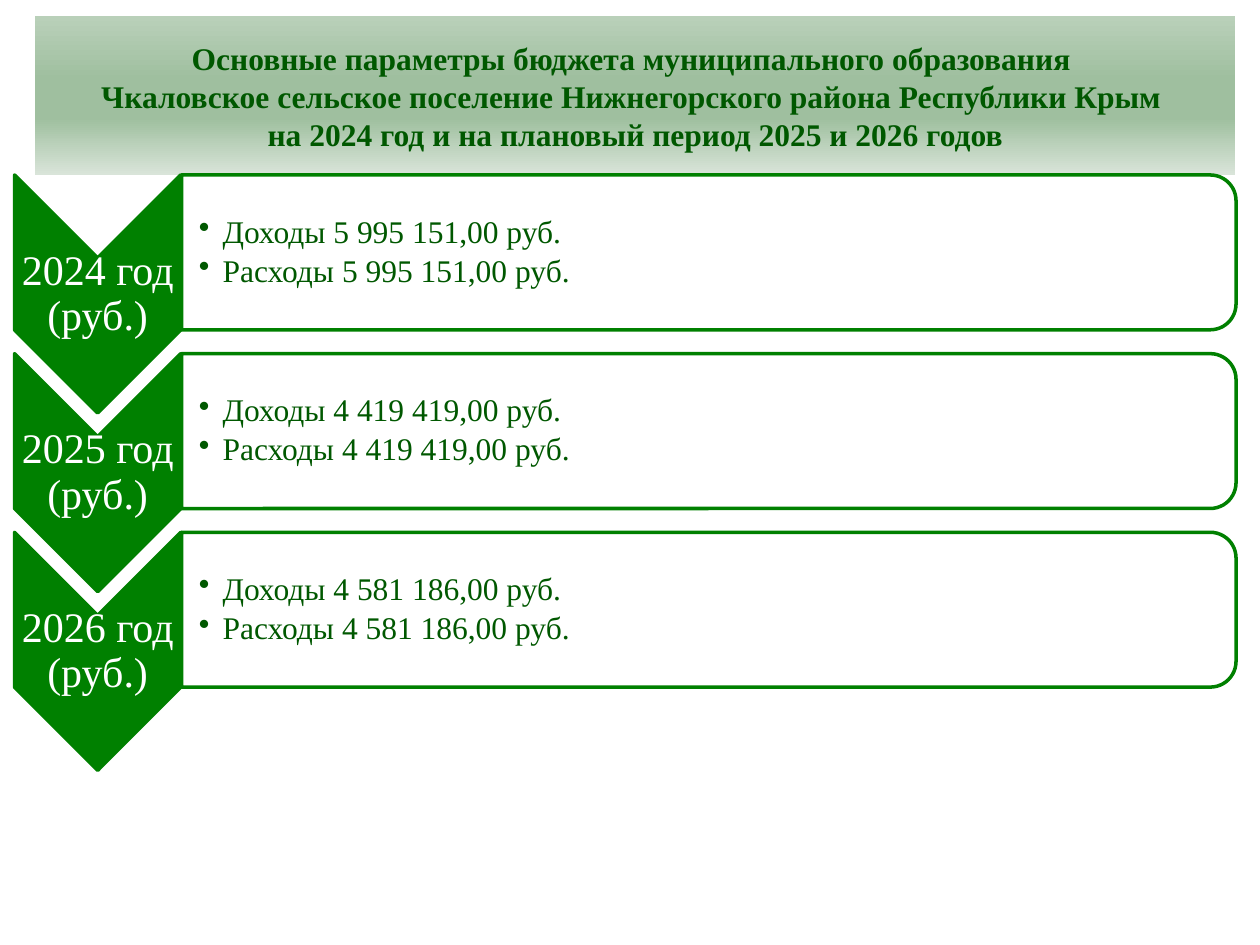
from typing import NamedTuple

from lxml.etree import SubElement
from pptx import Presentation
from pptx.dml.color import RGBColor
from pptx.enum.shapes import MSO_SHAPE
from pptx.enum.text import MSO_ANCHOR, MSO_AUTO_SIZE, PP_ALIGN
from pptx.oxml import parse_xml
from pptx.oxml.ns import nsdecls, qn
from pptx.util import Pt

GREEN = RGBColor(0x00, 0x80, 0x00)
DARK_GREEN = RGBColor(0x00, 0x58, 0x00)
WHITE = RGBColor(0xFF, 0xFF, 0xFF)
BANNER_STOPS = (
    (0, RGBColor(0xB9, 0xD0, 0xB9)),
    (40, RGBColor(0x9F, 0xBF, 0x9F)),
    (65, RGBColor(0xA1, 0xC1, 0xA1)),
    (100, RGBColor(0xD9, 0xE4, 0xD9)),
)
FONT = "Times New Roman"
FIRST_TOP = 100
ROW_STEP = 102.1
TITLE_LINES = (
    "Основные параметры бюджета муниципального образования ",
    "Чкаловское сельское поселение Нижнегорского района Республики Крым ",
    "на 2024 год и на плановый период 2025 и 2026 годов",
)


class Box(NamedTuple):
    left: float
    top: float
    width: float
    height: float


class BudgetYear(NamedTuple):
    year: int
    income: str
    expenses: str


BUDGET = (
    BudgetYear(2024, "5 995 151,00", "5 995 151,00"),
    BudgetYear(2025, "4 419 419,00", "4 419 419,00"),
    BudgetYear(2026, "4 581 186,00", "4 581 186,00"),
)


def format_spans(frame, size: float, color: RGBColor, bold: bool = False) -> None:
    for para in frame.paragraphs:
        for span in para.runs:
            span.font.name = FONT
            span.font.size = Pt(size)
            span.font.bold = bold
            span.font.color.rgb = color


def add_turned_shape(page, kind: MSO_SHAPE, box: Box, fill: RGBColor):
    center_x = box.left + box.width / 2
    center_y = box.top + box.height / 2
    shape = page.shapes.add_shape(
        kind, Pt(center_x - box.height / 2), Pt(center_y - box.width / 2),
        Pt(box.height), Pt(box.width))
    shape.rotation = 90
    shape.shadow.inherit = False
    shape.fill.solid()
    shape.fill.fore_color.rgb = fill
    shape.line.color.rgb = GREEN
    shape.line.width = Pt(2)
    SubElement(shape.line._ln, qn("a:round"))
    return shape


def add_text(page, box: Box, lines: tuple, margin: float, left_margin: float):
    frame = page.shapes.add_textbox(*(Pt(length) for length in box)).text_frame
    frame.word_wrap = True
    frame.vertical_anchor = MSO_ANCHOR.MIDDLE
    frame.margin_left = Pt(left_margin)
    frame.margin_top = frame.margin_right = frame.margin_bottom = Pt(margin)
    frame.text = "\n".join(lines)
    for para in frame.paragraphs:
        para.line_spacing = 0.9
    return frame


def add_bullet(para) -> None:
    properties = para._p.get_or_add_pPr()
    properties.set("lvl", "1")
    properties.set("marL", str(Pt(13.5)))
    properties.set("indent", str(-Pt(13.5)))
    SubElement(properties, qn("a:buChar")).set("char", "•")


def add_title(page) -> None:
    title = page.shapes.title
    title.left, title.top, title.width, title.height = Pt(20), Pt(9.2), Pt(686), Pt(91)
    properties = title._element.spPr
    properties.append(parse_xml(
        f'<a:prstGeom {nsdecls("a")} prst="roundRect"><a:avLst/></a:prstGeom>'))
    stops = "".join(
        f'<a:gs pos="{position * 1000}"><a:srgbClr val="{color}"/></a:gs>'
        for position, color in BANNER_STOPS)
    properties.append(parse_xml(
        f'<a:gradFill {nsdecls("a")} rotWithShape="1"><a:gsLst>{stops}</a:gsLst>'
        '<a:lin ang="5400000" scaled="0"/></a:gradFill>'))
    frame = title.text_frame
    frame.text = "\n".join(TITLE_LINES)
    frame.word_wrap = False
    frame.auto_size = MSO_AUTO_SIZE.NONE
    frame.vertical_anchor = MSO_ANCHOR.MIDDLE
    for para in frame.paragraphs:
        para.alignment = PP_ALIGN.CENTER
    format_spans(frame, 18, DARK_GREEN, bold=True)


def add_budget_row(page, budget: BudgetYear, top: float) -> None:
    add_turned_shape(page, MSO_SHAPE.CHEVRON, Box(8.3, top, 95, 136), GREEN)
    label = add_text(page, Box(8.3, top + 47.6, 95, 41),
                     (f"{budget.year} год (руб.)",), 1.2, 1.2)
    label.paragraphs[0].alignment = PP_ALIGN.CENTER
    format_spans(label, 24, WHITE)

    panel = add_turned_shape(page, MSO_SHAPE.ROUND_2_SAME_RECTANGLE,
                             Box(103.7, top, 602.6, 88.5), WHITE)
    color = panel._element.spPr.find(qn("a:solidFill")).find(qn("a:srgbClr"))
    SubElement(color, qn("a:alpha")).set("val", "90000")
    items = add_text(page, Box(103.7, top + 4.3, 598.3, 80),
                     (f"Доходы {budget.income} руб.",
                      f"Расходы {budget.expenses} руб."), 0.9, 10)
    for para in items.paragraphs:
        para.space_after = Pt(3)
        add_bullet(para)
    format_spans(items, 18, DARK_GREEN)


def main() -> None:
    deck = Presentation()
    deck.slide_width, deck.slide_height = Pt(720), Pt(540)
    page = deck.slides.add_slide(deck.slide_layouts[5])
    add_title(page)
    for index, budget in enumerate(BUDGET):
        add_budget_row(page, budget, FIRST_TOP + index * ROW_STEP)
    deck.save("out.pptx")


if __name__ == "__main__":
    main()
